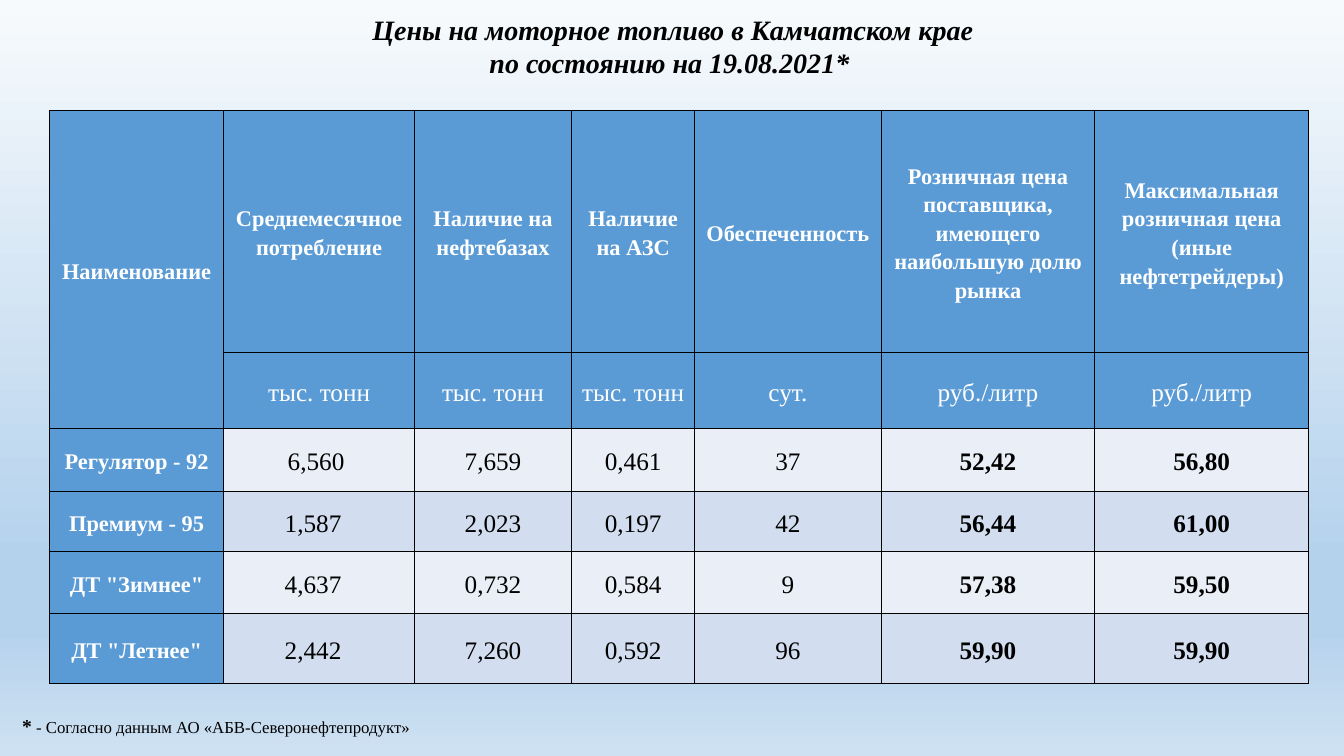
"""Build a slide with a table of motor fuel prices."""
from lxml.etree import SubElement
from pptx import Presentation
from pptx.dml.color import RGBColor as RGB
from pptx.enum.text import MSO_ANCHOR as Anchor, PP_ALIGN as Align
from pptx.oxml.ns import qn
from pptx.util import Inches, Pt

TITLE = "Цены на моторное топливо в Камчатском крае\nпо состоянию на 19.08.2021* "
NOTE = [("*", 14, True), (" - Согласно данным АО «АБВ-Северонефтепродукт»", 12, False)]
ROWS = [
    ["Наименование", "Среднемесячное потребление", "Наличие на нефтебазах",
     "Наличие на АЗС", "Обеспеченность",
     "Розничная цена поставщика, имеющего наибольшую долю рынка",
     "Максимальная розничная цена\n(иные нефтетрейдеры)"],
    ["", "тыс. тонн", "тыс. тонн", "тыс. тонн", "сут.", "руб./литр", "руб./литр"],
    ["Регулятор - 92", "6,560", "7,659", "0,461", "37", "52,42", "56,80"],
    ["Премиум - 95", "1,587", "2,023", "0,197", "42", "56,44", "61,00"],
    ['ДТ "Зимнее"', "4,637", "0,732", "0,584", "9", "57,38", "59,50"],
    ['ДТ "Летнее"', "2,442", "7,260", "0,592", "96", "59,90", "59,90"],
]
WIDTHS = [1.73, 1.89, 1.56, 1.22, 1.85, 2.12, 2.12]
HEIGHTS = [2.4, 0.75, 0.63, 0.59, 0.62, 0.69]
HEADS, PRICES, PAD = 2, 5, 0.07
NUDGE = {(2, 1): 0.06, (3, 1): 0.12, (4, 1): 0.12, (5, 1): 0.12}
THEME = {
    "font": "Times New Roman", "title": 20, "label": 16, "value": 18,
    "ink": "000000", "white": "FFFFFF", "head": "5B9BD5",
    "bands": ["EAEFF7", "D2DEEF"],
    "sky": [(0, "F7FAFD"), (74, "B5D2EC"), (83, "B5D2EC"), (100, "CEE1F2")],
}


def style(run, size, color, bold, italic=False):
    """Format one run."""
    font = run.font
    font.name, font.size = THEME["font"], Pt(size)
    font.bold, font.italic = bold, italic
    font.color.rgb = RGB.from_string(color)


def paint(slide):
    """Fill the background with the sky gradient."""
    fill = slide.background.fill
    fill.gradient()
    fill.gradient_angle = 270
    stops = slide.element.find(".//" + qn("a:gsLst"))
    for stop in list(stops):
        stops.remove(stop)
    for pos, color in THEME["sky"]:
        stop = SubElement(stops, qn("a:gs"), pos=str(pos * 1000))
        SubElement(stop, qn("a:srgbClr"), val=color)


def edge(cell):
    """Draw a thin line on each side of a cell."""
    props = cell._tc.get_or_add_tcPr()
    for side in "LRTB":
        line = SubElement(props, qn("a:ln" + side), w=str(Pt(1)))
        fill = SubElement(line, qn("a:solidFill"))
        SubElement(fill, qn("a:srgbClr"), val=THEME["ink"])


def dress(cell, row, col):
    """Write and format one table cell."""
    head = row < HEADS or col == 0
    label = row == 0 or col == 0
    edge(cell)
    cell.fill.solid()
    shade = THEME["head"] if head else THEME["bands"][row % 2]
    cell.fill.fore_color.rgb = RGB.from_string(shade)
    cell.vertical_anchor = Anchor.MIDDLE
    cell.margin_top = cell.margin_bottom = 0
    cell.margin_left = Inches(PAD)
    cell.margin_right = Inches(PAD + NUDGE.get((row, col), 0))
    cell.text_frame.text = ROWS[row][col]
    for para in cell.text_frame.paragraphs:
        para.alignment, para.line_spacing = Align.CENTER, 1.15
        for run in para.runs:
            style(run, THEME["label" if label else "value"],
                  THEME["white" if head else "ink"],
                  label or (row >= HEADS and col >= PRICES))


def add_prices(slide):
    """Add the price table."""
    table = slide.shapes.add_table(
        len(ROWS), len(WIDTHS), Inches(0.49), Inches(1.1),
        Inches(sum(WIDTHS)), Inches(sum(HEIGHTS))).table
    for col, width in zip(table.columns, WIDTHS):
        col.width = Inches(width)
    for row, height in zip(table.rows, HEIGHTS):
        row.height = Inches(height)
    for row in range(len(ROWS)):
        for col in range(len(WIDTHS)):
            dress(table.cell(row, col), row, col)
    table.cell(0, 0).merge(table.cell(1, 0))


def add_title(slide):
    """Place the two-line title."""
    title = slide.shapes.title
    title.left, title.top = Inches(1.32), Inches(0.07)
    title.width, title.height = Inches(10.71), Inches(0.77)
    title.text_frame.text = TITLE
    for para in title.text_frame.paragraphs:
        para.alignment = Align.CENTER
        para.space_before = Pt(0)
        style(para.runs[0], THEME["title"], THEME["ink"], True, True)


def add_note(slide):
    """Add the footnote."""
    box = slide.shapes.add_textbox(Inches(0.12), Inches(7.03), Inches(5.98), Inches(0.34))
    box.text_frame.word_wrap = True
    para = box.text_frame.paragraphs[0]
    for text, size, bold in NOTE:
        run = para.add_run()
        run.text = text
        style(run, size, THEME["ink"], bold)


def main():
    """Build and save the deck."""
    deck = Presentation()
    deck.slide_width, deck.slide_height = Inches(13.33), Inches(7.5)
    slide = deck.slides.add_slide(deck.slide_layouts[5])
    paint(slide)
    add_prices(slide)
    add_title(slide)
    add_note(slide)
    deck.save("out.pptx")


if __name__ == "__main__":
    main()
